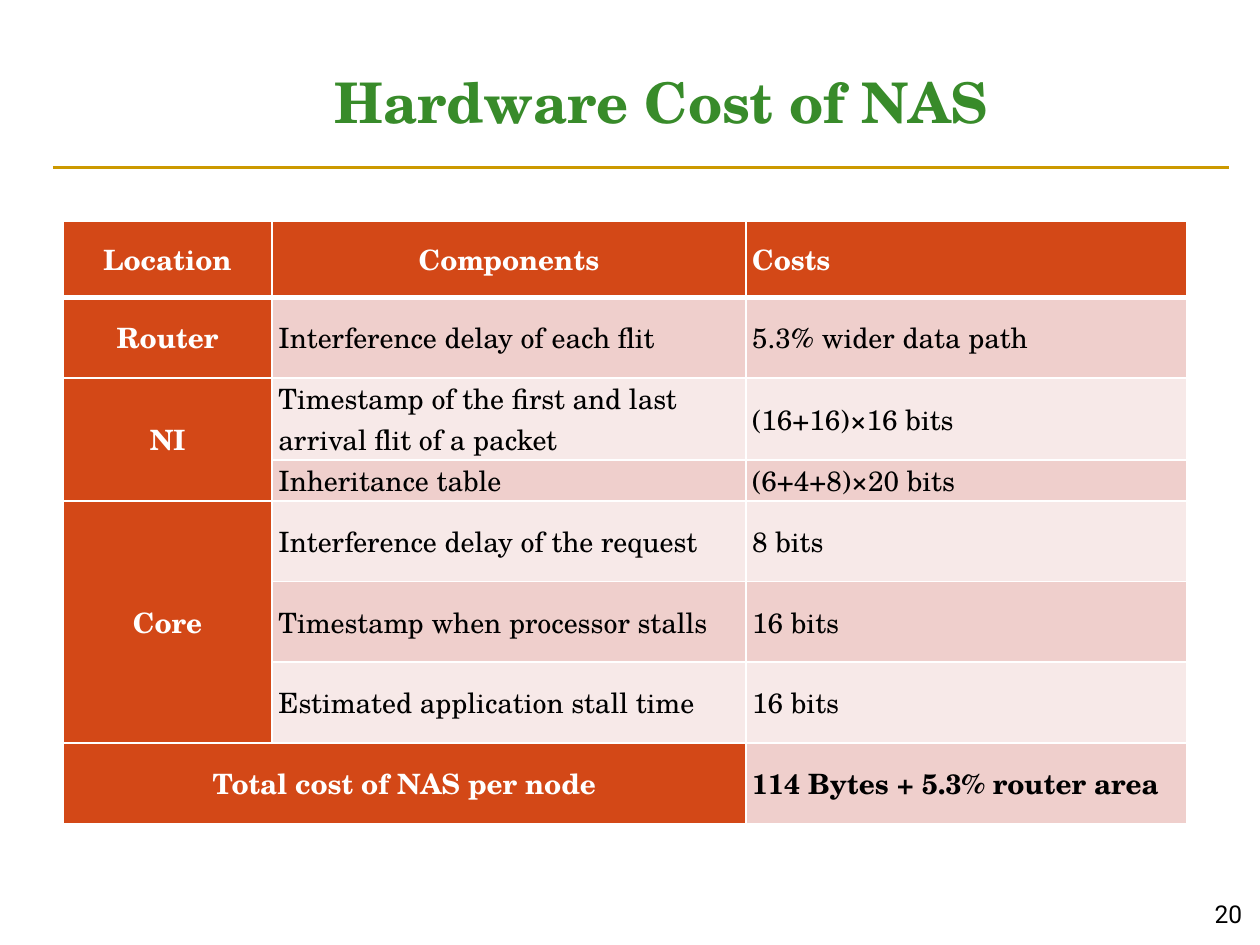
from dataclasses import dataclass

import lxml.etree
import pptx
import pptx.dml.color
import pptx.enum.shapes
import pptx.enum.text
import pptx.oxml.ns
import pptx.util

Inches = pptx.util.Inches
Pt = pptx.util.Pt
ALIGN = pptx.enum.text.PP_ALIGN
ANCHOR = pptx.enum.text.MSO_ANCHOR
qn = pptx.oxml.ns.qn


@dataclass(frozen=True)
class Theme:
    serif: str = "TeX Gyre Schola"
    sans: str = "Roboto"
    title: str = "388B2A"
    rule: str = "CC9900"
    accent: str = "D34817"
    bands: tuple = ("F7E9E8", "EFCFCC")
    light: str = "FFFFFF"
    dark: str = "000000"
    title_size: int = 32
    table_size: int = 16
    number_size: int = 14


THEME = Theme()

COST_ROWS = [
    ("Location", "Components", "Costs"),
    ("Router", "Interference delay of each flit", "5.3% wider data path"),
    ("NI", "Timestamp of the first and last arrival flit of a packet", "(16+16)×16 bits"),
    ("", "Inheritance table", "(6+4+8)×20 bits"),
    ("Core", "Interference delay of the request", "8 bits"),
    ("", "Timestamp when processor stalls", "16 bits"),
    ("", "Estimated application stall time", "16 bits"),
    ("Total cost of NAS per node", "", "114 Bytes + 5.3% router area"),
]
COLUMN_WIDTHS = (1.66, 3.76, 3.5)
ROW_HEIGHTS = (0.6, 0.64, 0.64, 0.32, 0.64, 0.64, 0.64, 0.64)
MERGES = (((2, 0), (3, 0)), ((4, 0), (6, 0)), ((7, 0), (7, 1)))


def rgb(value):
    return pptx.dml.color.RGBColor.from_string(value)


def format_text(frame, font, size, color, bold=False, align=ALIGN.LEFT):
    for paragraph in frame.paragraphs:
        paragraph.alignment = align
        for run in paragraph.runs:
            run.font.name = font
            run.font.size = Pt(size)
            run.font.bold = bold
            run.font.color.rgb = rgb(color)


def set_margins(frame, left, top, right, bottom):
    frame.margin_left, frame.margin_top = Inches(left), Inches(top)
    frame.margin_right, frame.margin_bottom = Inches(right), Inches(bottom)


def add_title(slide, wording):
    title = slide.shapes.title
    title.left, title.top = Inches(1), Inches(0.3)
    title.width, title.height = Inches(8.5), Inches(0.87)
    frame = title.text_frame
    frame.text = wording
    frame.vertical_anchor = ANCHOR.BOTTOM
    set_margins(frame, 0.1, 0.05, 0.1, 0.1)
    format_text(frame, THEME.serif, THEME.title_size, THEME.title, True, ALIGN.CENTER)


def add_title_rule(slide):
    rule = slide.shapes.add_connector(
        pptx.enum.shapes.MSO_CONNECTOR.STRAIGHT,
        Inches(0.42), Inches(1.33), Inches(9.75), Inches(1.33))
    rule.line.color.rgb = rgb(THEME.rule)
    rule.line.width = Pt(1.75)
    lxml.etree.SubElement(rule._element.spPr, qn("a:effectLst"))


def add_page_number(slide, number):
    badge = slide.shapes.add_shape(
        pptx.enum.shapes.MSO_SHAPE.OVAL,
        Inches(9.5), Inches(7), Inches(0.5), Inches(0.5))
    badge.shadow.inherit = False
    badge.fill.background()
    badge.line.fill.background()
    frame = badge.text_frame
    frame.text = number
    frame.word_wrap = False
    frame.vertical_anchor = ANCHOR.MIDDLE
    set_margins(frame, 0, 0, 0, 0)
    format_text(frame, THEME.sans, THEME.number_size, THEME.dark, align=ALIGN.CENTER)


def set_borders(cell, row):
    widths = {"L": 1, "R": 1, "T": 3 if row == 1 else 1, "B": 3 if row == 0 else 1}
    properties = cell._tc.get_or_add_tcPr()
    for side, width in widths.items():
        border = lxml.etree.SubElement(properties, qn("a:ln" + side), w=str(Pt(width)))
        fill = lxml.etree.SubElement(border, qn("a:solidFill"))
        lxml.etree.SubElement(fill, qn("a:srgbClr"), val=THEME.light)


def format_cell(cell, row, column, wording):
    total = row == len(COST_ROWS) - 1
    heading = row == 0 or column == 0 or (total and column == 1)
    set_borders(cell, row)
    cell.fill.solid()
    cell.fill.fore_color.rgb = rgb(THEME.accent if heading else THEME.bands[row % 2])
    cell.vertical_anchor = ANCHOR.MIDDLE
    set_margins(cell, 0.05, 0, 0.05, 0)
    cell.text_frame.text = wording
    centred = heading and column < 2
    format_text(cell.text_frame, THEME.serif, THEME.table_size,
                THEME.light if heading else THEME.dark, heading or total,
                ALIGN.CENTER if centred else ALIGN.LEFT)


def add_cost_table(slide):
    costs = slide.shapes.add_table(
        len(ROW_HEIGHTS), len(COLUMN_WIDTHS), Inches(0.5), Inches(1.76),
        Inches(sum(COLUMN_WIDTHS)), Inches(sum(ROW_HEIGHTS))).table
    for column, width in zip(costs.columns, COLUMN_WIDTHS):
        column.width = Inches(width)
    for row, height in zip(costs.rows, ROW_HEIGHTS):
        row.height = Inches(height)
    for row, entries in enumerate(COST_ROWS):
        for column, wording in enumerate(entries):
            format_cell(costs.cell(row, column), row, column, wording)
    for first, last in MERGES:
        costs.cell(*first).merge(costs.cell(*last))


def main():
    deck = pptx.Presentation()
    deck.slide_width, deck.slide_height = Inches(10), Inches(7.5)
    slide = deck.slides.add_slide(deck.slide_layouts.get_by_name("Title Only"))
    add_title_rule(slide)
    add_title(slide, "Hardware Cost of NAS")
    add_page_number(slide, "20")
    add_cost_table(slide)
    deck.save("out.pptx")


if __name__ == "__main__":
    main()
